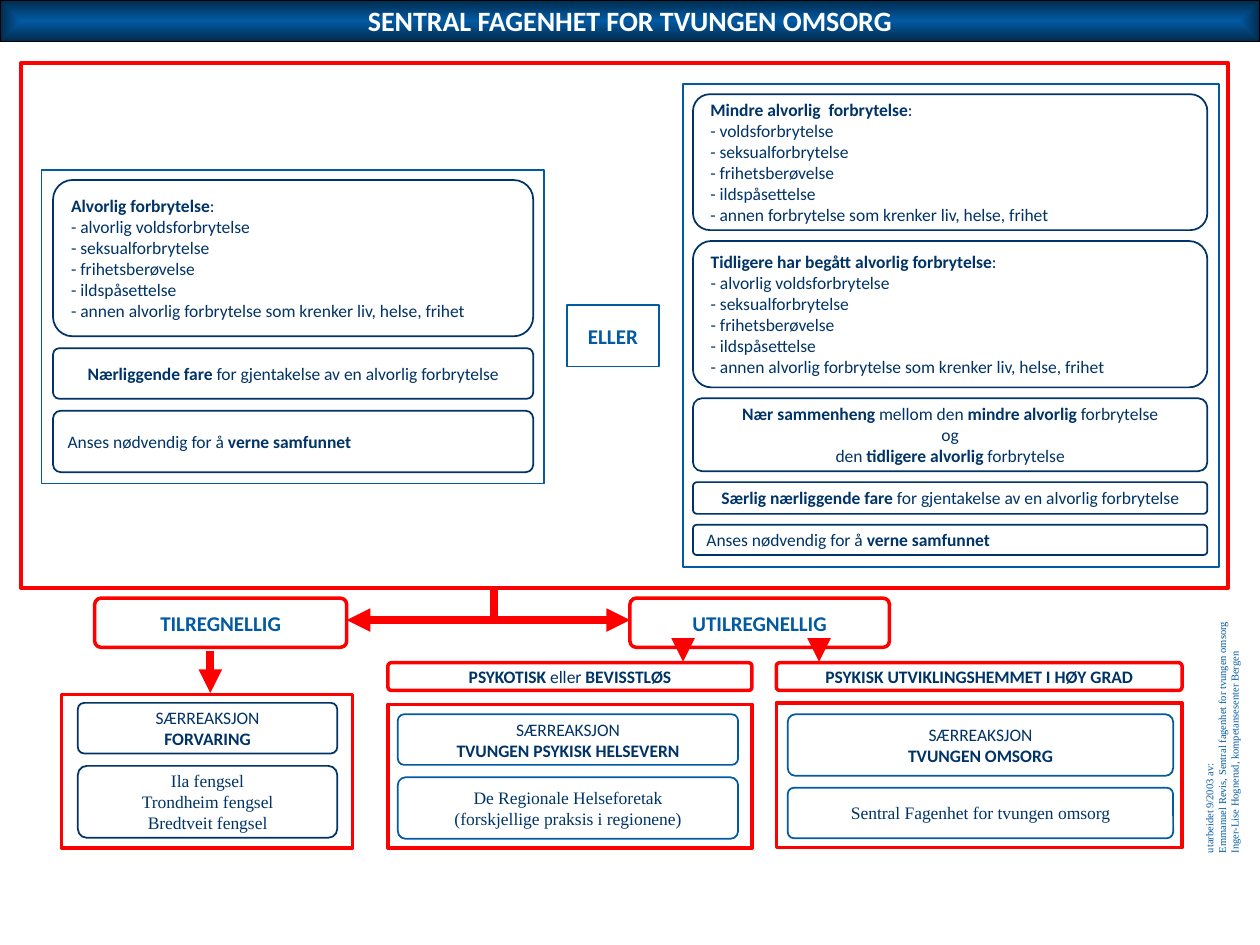
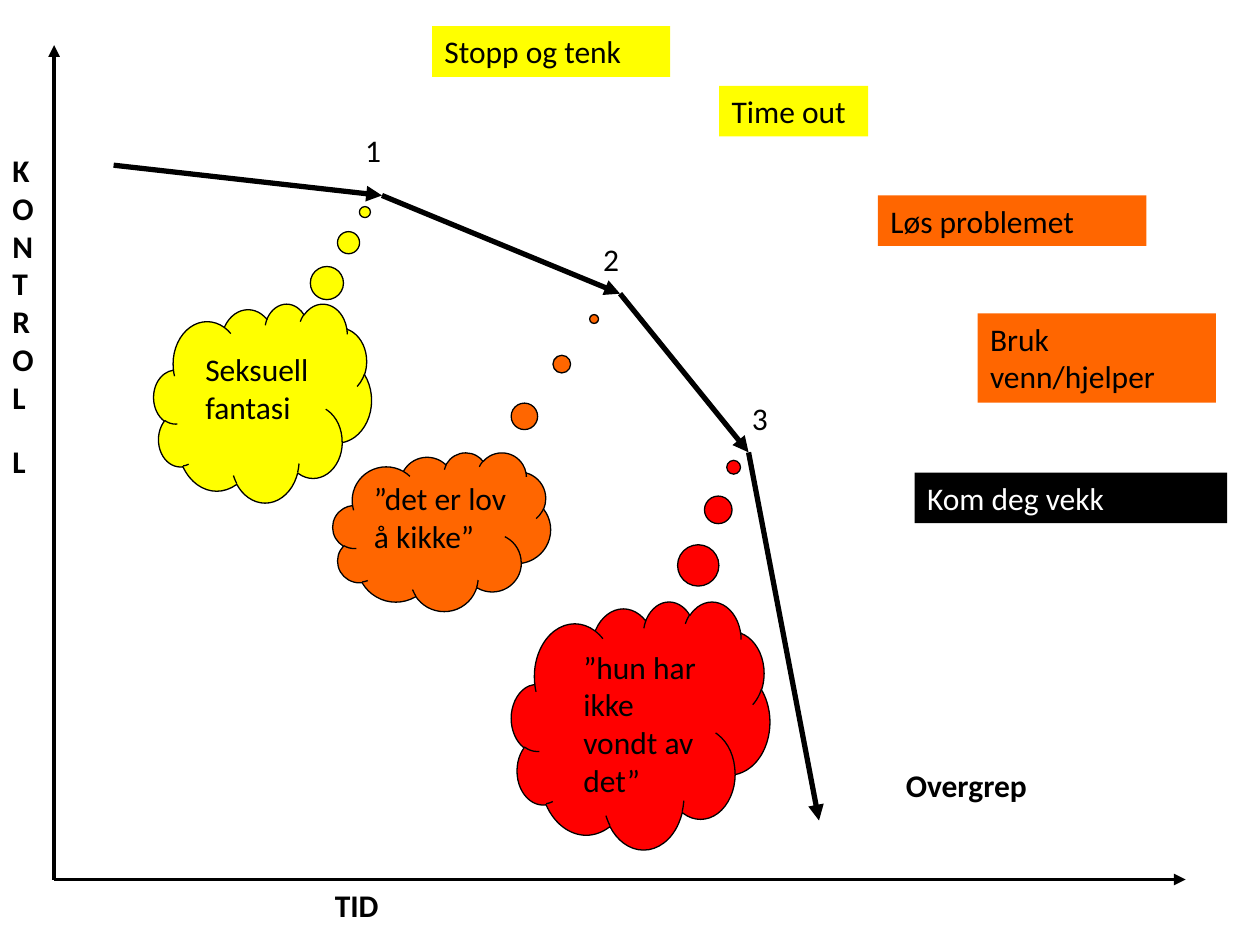
from dataclasses import dataclass
from typing import Any, NamedTuple

from lxml import etree
from pptx import Presentation
from pptx import util as u
from pptx.dml import color
from pptx.enum import shapes, text
from pptx.oxml import ns

NAVY, BLUE, DEEP = "003366", "025AA2", "012A4B"
RED, YELLOW, ORANGE = "FF0000", "FFFF00", "FF6600"
BLACK, WHITE = "000000", "FFFFFF"
SANS, SERIF = "Calibri", "Times New Roman"

KIND = shapes.MSO_SHAPE
MID = text.MSO_ANCHOR.MIDDLE
TOP = text.MSO_ANCHOR.TOP
LEFT = text.PP_ALIGN.LEFT
CENTER = text.PP_ALIGN.CENTER


@dataclass
class Look:
    font: str = SANS
    size: float = 10
    ink: str = NAVY
    align: Any = CENTER
    anchor: Any = MID
    wrap: bool = False
    space: float = 0


@dataclass
class Box:
    x: float
    y: float
    w: float
    h: float
    words: str = ""
    look: Look | None = None
    line: str | None = None
    wide: float = 1
    fill: str | None = None
    kind: Any = KIND.ROUNDED_RECTANGLE
    adj: tuple[float, ...] = (0.125,)


class Item(NamedTuple):
    h: float
    words: str
    look: Look


class Line(NamedTuple):
    start: tuple[float, float]
    end: tuple[float, float]
    ink: str
    wide: float
    head: bool = True


BODY = Look()
LIST = Look(align=LEFT)
ROMAN = Look(font=SERIF)
HEAD = Look(size=12, ink=BLUE)
TITLE = Look(size=16, ink=WHITE)
CREDIT = Look(SERIF, 6, BLUE, LEFT, TOP, True)
NOTE = Look(SANS, 18, BLACK, LEFT, TOP, True, 15)
PALE = Look(SANS, 18, WHITE, LEFT, TOP, True)

ACTS = "- seksualforbrytelse\n- frihetsberøvelse\n- ildspåsettelse\n"
GRAVE = ("- alvorlig voldsforbrytelse\n" + ACTS
         + "- annen alvorlig forbrytelse som krenker liv, helse, frihet")
MINOR = "- voldsforbrytelse\n" + ACTS + "- annen forbrytelse som krenker liv, helse, frihet"
GUARD = "Anses nødvendig for å *verne samfunnet*"
AGAIN = "for gjentakelse av en alvorlig forbrytelse"


def rgb(code: str) -> color.RGBColor:
    return color.RGBColor.from_string(code)


def apply(item: Any, **values: Any) -> None:
    for name, value in values.items():
        setattr(item, name, value)


def write(frame: Any, words: str, look: Look) -> None:
    apply(frame, word_wrap=look.wrap, vertical_anchor=look.anchor)
    for i, row in enumerate(words.split("\n")):
        para = frame.paragraphs[0] if i == 0 else frame.add_paragraph()
        para.alignment = look.align
        if i and look.space:
            para.space_before = u.Pt(look.space)
        for j, part in enumerate(row.split("*")):
            if part:
                run = para.add_run()
                run.text = part
                apply(run.font, name=look.font, size=u.Pt(look.size), bold=j % 2 == 1)
                run.font.color.rgb = rgb(look.ink)


def draw(slide: Any, box: Box) -> Any:
    shape = slide.shapes.add_shape(
        box.kind, *(u.Cm(n) for n in (box.x, box.y, box.w, box.h)))
    shape.shadow.inherit = False
    if box.kind != KIND.RECTANGLE:
        for i, value in enumerate(box.adj):
            shape.adjustments[i] = value
    if box.fill:
        shape.fill.solid()
        shape.fill.fore_color.rgb = rgb(box.fill)
    else:
        shape.fill.background()
    if box.line:
        shape.line.color.rgb = rgb(box.line)
        shape.line.width = u.Pt(box.wide)
    else:
        shape.line.fill.background()
    if box.look:
        write(shape.text_frame, box.words, box.look)
    return shape


def label(slide: Any, x: float, y: float, w: float, h: float,
          words: str, look: Look = NOTE) -> Any:
    shape = slide.shapes.add_textbox(*(u.Cm(n) for n in (x, y, w, h)))
    write(shape.text_frame, words, look)
    return shape


def stack(slide: Any, x: float, y: float, w: float, gap: float,
          line: str, items: list[Item]) -> None:
    for item in items:
        draw(slide, Box(x, y, w, item.h, item.words, item.look, line))
        y += item.h + gap


def link(slide: Any, line: Line) -> None:
    ends = (u.Cm(n) for n in (*line.start, *line.end))
    wire = slide.shapes.add_connector(shapes.MSO_CONNECTOR.STRAIGHT, *ends)
    wire.line.color.rgb = rgb(line.ink)
    wire.line.width = u.Pt(line.wide)
    props = wire.element.spPr
    if line.head:
        etree.SubElement(props.find(ns.qn("a:ln")), ns.qn("a:tailEnd"), type="triangle")
    etree.SubElement(props, ns.qn("a:effectLst"))


def glow(shape: Any, inner: str, outer: str) -> None:
    shape.fill.gradient()
    for stop, place, ink in zip(shape.fill.gradient_stops, (0, 1), (inner, outer)):
        stop.position = place
        stop.color.rgb = rgb(ink)
    grad = shape.element.spPr.find(ns.qn("a:gradFill"))
    grad.remove(grad.find(ns.qn("a:lin")))
    track = etree.SubElement(grad, ns.qn("a:path"), path="shape")
    sides = dict.fromkeys("ltrb", "50000")
    etree.SubElement(track, ns.qn("a:fillToRect"), **sides)


def chart_law(slide: Any) -> None:
    band = draw(slide, Box(0, 0, 25.4, 0.84, "*SENTRAL FAGENHET FOR TVUNGEN OMSORG*",
                           TITLE, BLACK, kind=KIND.RECTANGLE))
    glow(band, BLUE, DEEP)

    stack(slide, 1.07, 3.63, 9.68, 0.24, NAVY, [
        Item(3.15, "*Alvorlig forbrytelse*:\n" + GRAVE, LIST),
        Item(1.02, "*Nærliggende fare* " + AGAIN, BODY),
        Item(1.24, GUARD, LIST),
    ])
    stack(slide, 13.97, 1.9, 10.37, 0.22, NAVY, [
        Item(2.74, "*Mindre alvorlig  forbrytelse*:\n" + MINOR, LIST),
        Item(2.95, "*Tidligere har begått alvorlig forbrytelse*:\n" + GRAVE, LIST),
        Item(1.47, "*Nær sammenheng* mellom den *mindre alvorlig* forbrytelse\n"
                   "og\nden *tidligere alvorlig* forbrytelse", BODY),
        Item(0.64, "*Særlig nærliggende fare* " + AGAIN, BODY),
        Item(0.61, GUARD, LIST),
    ])
    stack(slide, 1.57, 14.17, 5.23, 0.25, NAVY, [
        Item(1.02, "SÆRREAKSJON\n*FORVARING*", BODY),
        Item(1.45, "Ila fengsel\nTrondheim fengsel\nBredtveit fengsel", ROMAN),
    ])
    stack(slide, 8.02, 14.4, 6.86, 0.25, BLUE, [
        Item(1.02, "SÆRREAKSJON\n*TVUNGEN PSYKISK HELSEVERN*", BODY),
        Item(1.24, "De Regionale Helseforetak\n(forskjellige praksis i regionene)", ROMAN),
    ])
    stack(slide, 15.88, 14.4, 7.77, 0.24, BLUE, [
        Item(1.24, "SÆRREAKSJON\n*TVUNGEN OMSORG*", BODY),
        Item(1.02, "Sentral Fagenhet for tvungen omsorg", ROMAN),
    ])

    for x, y, w, h, words, look in (
        (1.91, 12.06, 5.08, 0.99, "*TILREGNELLIG*", HEAD),
        (12.7, 12.06, 5.23, 0.99, "*UTILREGNELLIG*", HEAD),
        (7.82, 13.36, 7.34, 0.56, "*PSYKOTISK* eller *BEVISSTLØS*", BODY),
        (15.65, 13.36, 8.18, 0.56, "*PSYKISK UTVIKLINGSHEMMET I HØY GRAD*", BODY),
    ):
        draw(slide, Box(x, y, w, h, words, look, RED, 2))

    draw(slide, Box(11.43, 6.15, 1.85, 1.24, "*ELLER*", HEAD, BLUE, kind=KIND.RECTANGLE))
    for x, y, w, h, ink, wide in (
        (0.84, 3.43, 10.13, 6.32, BLUE, 1),
        (13.77, 1.7, 10.8, 9.73, BLUE, 1),
        (0.43, 1.27, 24.33, 10.59, RED, 2.25),
        (1.24, 14, 5.87, 3.1, RED, 2),
        (7.82, 14.2, 7.34, 2.9, RED, 2),
        (15.65, 14.17, 8.18, 2.92, RED, 2),
    ):
        draw(slide, Box(x, y, w, h, line=ink, wide=wide, kind=KIND.RECTANGLE))

    credit = label(slide, 22.07, 14.12, 5.38, 1.27,
                   "utarbeidet 9/2003 av:\n"
                   "Emmanuel Revis, Sentral fagenhet for tvungen omsorg\n"
                   "Inger-Lise Hognerud, kompetansesenter Bergen", CREDIT)
    credit.rotation = 270

    fork = (9.96, 12.5)
    link(slide, Line((9.96, 11.86), fork, RED, 4.5, False))
    for x in (6.99, 12.7):
        link(slide, Line(fork, (x, 12.5), RED, 4.5))
    for x, y in ((4.24, 13.97), (13.77, 13.34), (16.51, 13.34)):
        link(slide, Line((x, 13.13), (x, y), RED, 4.5))


def chart_slope(slide: Any) -> None:
    slope = [(2.29, 3.33), (7.7, 3.94), (12.5, 5.92), (15.09, 9.12), (16.51, 16.54)]
    for start, end in zip(slope, slope[1:]):
        link(slide, Line(start, end, BLACK, 3))
    base = (1.09, 17.73)
    for end in ((1.09, 0.91), (23.9, 17.73)):
        link(slide, Line(base, end, BLACK, 2.25))

    for x, y, w, h, ink, adj in (
        (3.1, 6.12, 4.39, 4.01, YELLOW, (0.47, -0.96)),
        (6.71, 9.12, 4.39, 3.2, ORANGE, (0.7, -1.34)),
        (10.31, 12.12, 5.21, 5, RED, (0.36, -1.04)),
    ):
        draw(slide, Box(x, y, w, h, line=BLACK, wide=0.75, fill=ink,
                        kind=KIND.CLOUD_CALLOUT, adj=adj))

    for x, y, w, h, words in (
        (6.5, 17.73, 11, 1.04, "*TID*"),
        (0, 2.92, 1.09, 6.96, "*KONTROL*\n*L*"),
        (7.11, 2.51, 0.99, 1.02, "1"),
        (11.91, 4.72, 1.6, 1.02, "2"),
        (14.91, 7.92, 1.4, 1.02, "3"),
        (18.01, 15.32, 7.39, 1.04, "*Overgrep*"),
        (3.89, 6.93, 3.61, 1.8, "Seksuell fantasi"),
        (7.29, 9.53, 3.4, 1.8, "”det er lov å kikke”"),
        (11.51, 12.93, 3, 3.33, "”hun har ikke vondt av det”"),
    ):
        label(slide, x, y, w, h, words)

    for x, y, w, h, ink, words, look in (
        (8.71, 0.53, 4.8, 1.02, YELLOW, "Stopp og tenk", NOTE),
        (14.5, 1.73, 3, 1.02, YELLOW, "Time out", NOTE),
        (17.7, 3.94, 5.41, 1.02, ORANGE, "Løs problemet", NOTE),
        (19.71, 6.32, 4.8, 1.8, ORANGE, "Bruk venn/hjelper", NOTE),
        (18.44, 9.53, 6.3, 1.02, BLACK, "Kom deg vekk", PALE),
    ):
        draw(slide, Box(x, y, w, h, words, look, fill=ink, kind=KIND.RECTANGLE))


def main() -> None:
    deck = Presentation()
    apply(deck, slide_width=u.Cm(25.4), slide_height=u.Cm(19.05))
    for build in (chart_law, chart_slope):
        build(deck.slides.add_slide(deck.slide_layouts[6]))
    deck.save("out.pptx")


if __name__ == "__main__":
    main()
